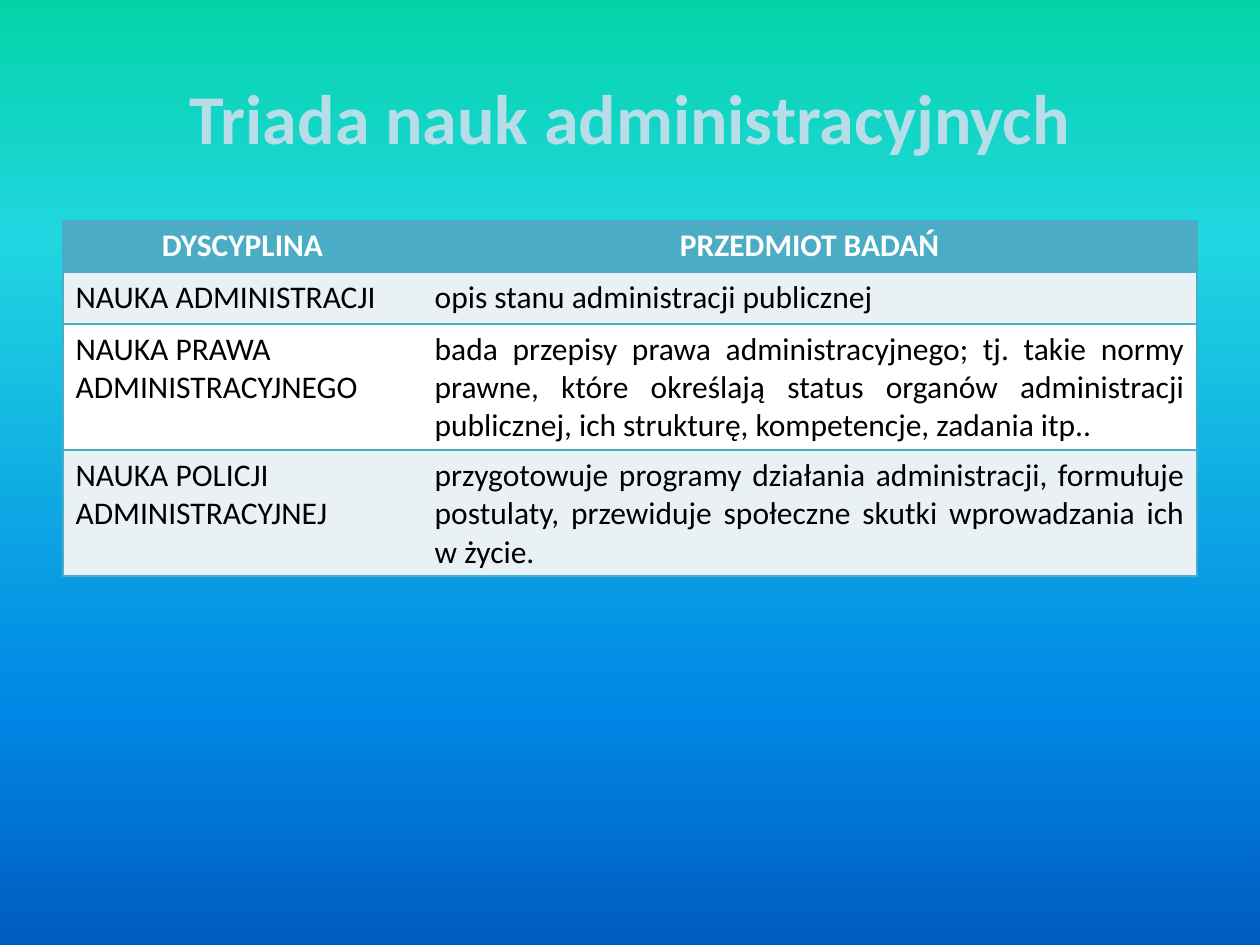
from dataclasses import dataclass

from lxml import etree
from pptx import Presentation
from pptx.dml.color import RGBColor
from pptx.enum.text import MSO_ANCHOR, PP_ALIGN
from pptx.oxml import parse_xml
from pptx.oxml.ns import nsdecls, qn
from pptx.util import Inches, Pt

LEFT, CENTER, JUSTIFY = PP_ALIGN.LEFT, PP_ALIGN.CENTER, PP_ALIGN.JUSTIFY
MIDDLE = MSO_ANCHOR.MIDDLE


@dataclass(frozen=True)
class Theme:
    font: str = "Calibri"
    title_size: int = 40
    table_size: int = 18
    title: str = "B7DEE8"
    accent: str = "4BACC6"
    header_text: str = "FFFFFF"
    body_text: str = "000000"
    bands: tuple = ("E9F1F5", "FFFFFF")
    backdrop: tuple = ((0, "03D4A8"), (25, "21D6E0"), (75, "0087E6"), (100, "005CBF"))


THEME = Theme()
TITLE = "Triada nauk administracyjnych"
HEADER = ("DYSCYPLINA", "PRZEDMIOT BADAŃ")
DISCIPLINES = (
    ("NAUKA ADMINISTRACJI", "opis stanu administracji publicznej"),
    ("NAUKA PRAWA ADMINISTRACYJNEGO",
     "bada przepisy prawa administracyjnego; tj. takie normy prawne, które określają "
     "status organów administracji publicznej, ich strukturę, kompetencje, zadania itp.."),
    ("NAUKA POLICJI ADMINISTRACYJNEJ",
     "przygotowuje programy działania administracji, formułuje postulaty, "
     "przewiduje społeczne skutki wprowadzania ich w życie."),
)
COLUMN_WIDTHS = (2.85, 6.15)
ROW_HEIGHTS = (0.41, 0.41, 1.0, 1.0)


def write_text(frame, text, *, size, color, bold=False, align=LEFT):
    paragraph = frame.paragraphs[0]
    paragraph.alignment = align
    run = paragraph.add_run()
    run.text = text
    run.font.name = THEME.font
    run.font.size = Pt(size)
    run.font.bold = bold
    run.font.color.rgb = RGBColor.from_string(color)


def paint_backdrop(slide):
    stops = "".join(
        f'<a:gs pos="{percent * 1000}"><a:srgbClr val="{color}"/></a:gs>'
        for percent, color in THEME.backdrop
    )
    background = parse_xml(
        f'<p:bg {nsdecls("p", "a")}><p:bgPr><a:gradFill rotWithShape="1">'
        f'<a:gsLst>{stops}</a:gsLst><a:lin ang="5400000" scaled="0"/></a:gradFill>'
        "<a:effectLst/></p:bgPr></p:bg>"
    )
    slide.element.cSld.insert(0, background)


def add_title(slide):
    box = slide.shapes.add_textbox(Inches(0.5), Inches(0.3), Inches(9), Inches(1.25))
    frame = box.text_frame
    frame.word_wrap = True
    frame.vertical_anchor = MIDDLE
    write_text(frame, TITLE, size=THEME.title_size, color=THEME.title,
               bold=True, align=CENTER)


def set_borders(cell, hidden_side):
    """Rule the cell in the accent colour, except on the inner side."""
    properties = cell._tc.get_or_add_tcPr()
    for index, side in enumerate("LRTB"):
        line = etree.Element(qn(f"a:ln{side}"), w=str(Pt(1)))
        if side == hidden_side:
            etree.SubElement(line, qn("a:noFill"))
        else:
            fill = etree.SubElement(line, qn("a:solidFill"))
            etree.SubElement(fill, qn("a:srgbClr"), val=THEME.accent)
        properties.insert(index, line)


def fill_row(cells, texts, *, fill, aligns, color, bold=False):
    for cell, text, align, hidden_side in zip(cells, texts, aligns, "RL"):
        cell.fill.solid()
        cell.fill.fore_color.rgb = RGBColor.from_string(fill)
        set_borders(cell, hidden_side)
        write_text(cell.text_frame, text, size=THEME.table_size,
                   color=color, bold=bold, align=align)


def add_discipline_table(slide):
    table = slide.shapes.add_table(
        len(ROW_HEIGHTS), len(COLUMN_WIDTHS), Inches(0.5), Inches(1.75),
        Inches(sum(COLUMN_WIDTHS)), Inches(sum(ROW_HEIGHTS)),
    ).table
    for column, width in zip(table.columns, COLUMN_WIDTHS):
        column.width = Inches(width)
    for row, height in zip(table.rows, ROW_HEIGHTS):
        row.height = Inches(height)

    header, *body = table.rows
    fill_row(header.cells, HEADER, fill=THEME.accent, aligns=(CENTER, CENTER),
             color=THEME.header_text, bold=True)
    for index, (row, texts) in enumerate(zip(body, DISCIPLINES)):
        fill_row(row.cells, texts, fill=THEME.bands[index % 2],
                 aligns=(LEFT, JUSTIFY), color=THEME.body_text)


def main():
    presentation = Presentation()
    presentation.slide_width = Inches(10)
    presentation.slide_height = Inches(7.5)
    slide = presentation.slides.add_slide(presentation.slide_layouts[6])
    paint_backdrop(slide)
    add_title(slide)
    add_discipline_table(slide)
    presentation.save("out.pptx")


if __name__ == "__main__":
    main()
